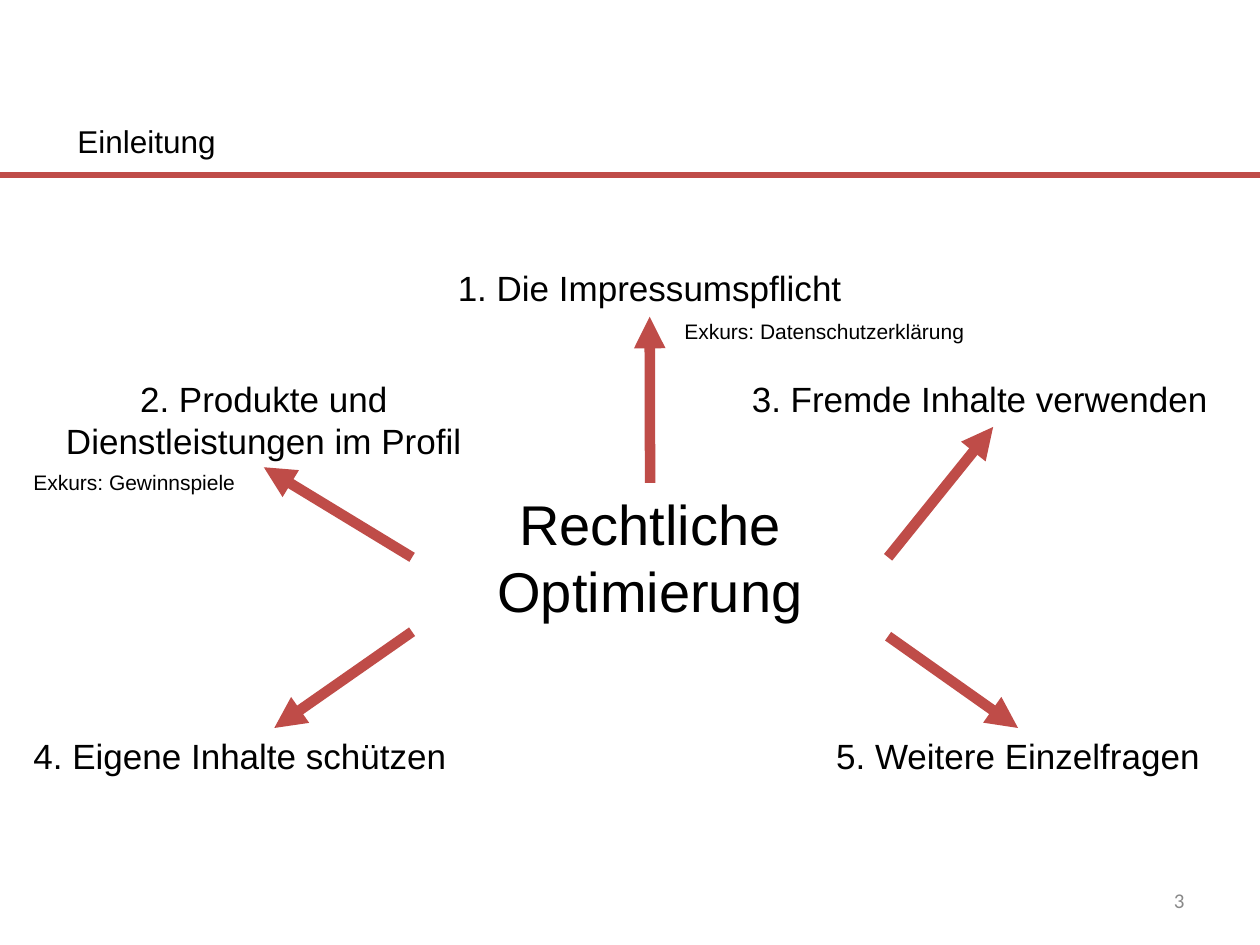
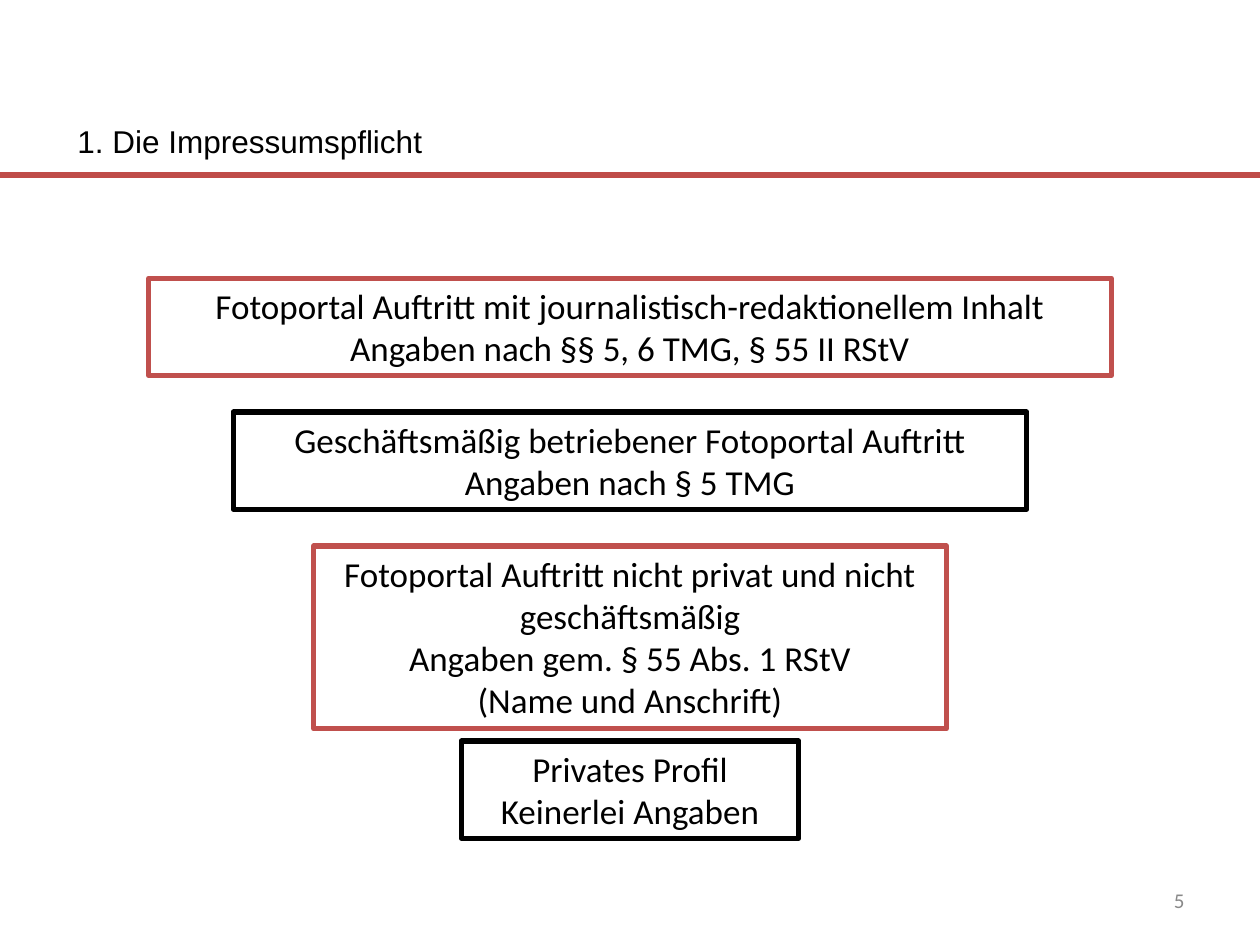
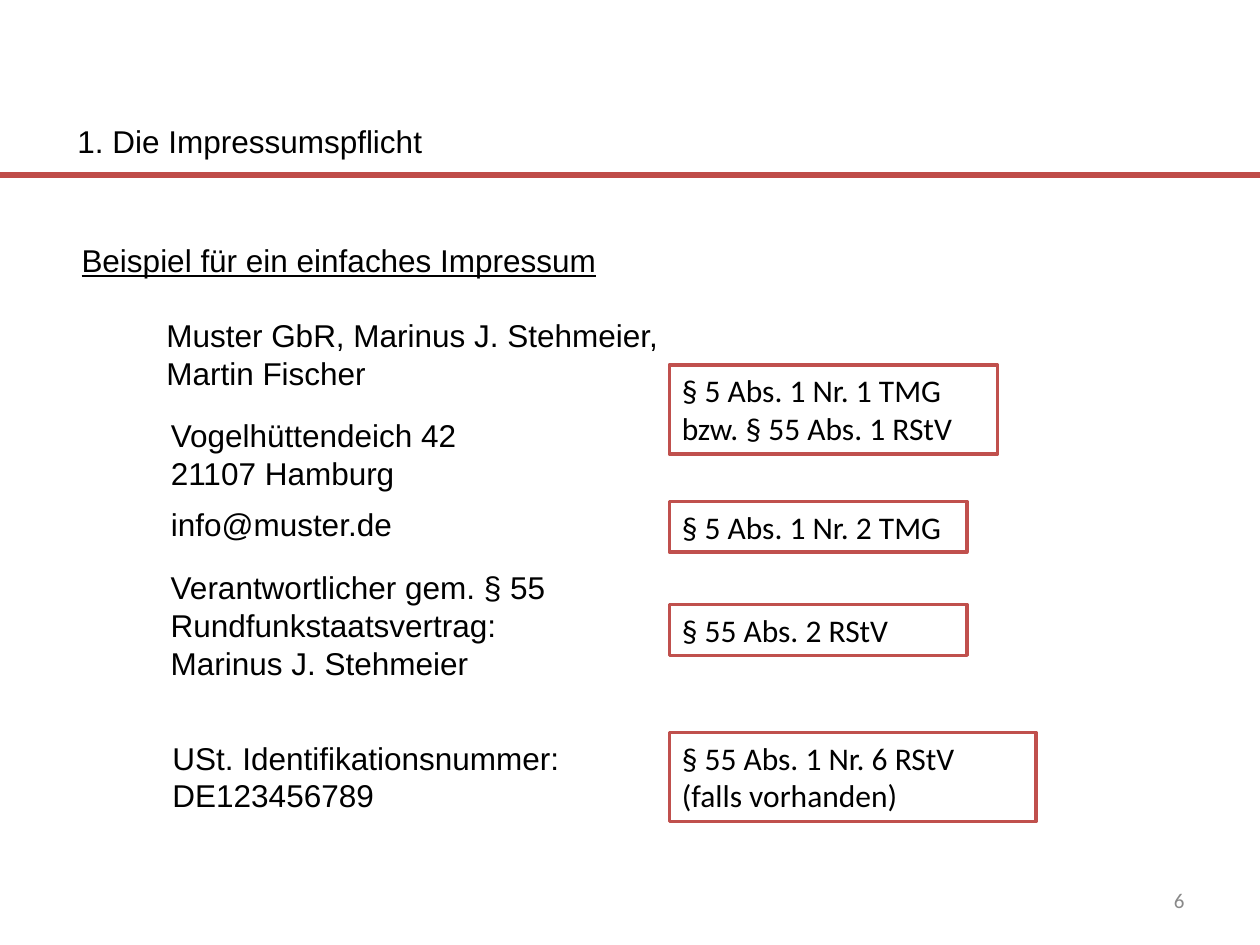
from lxml import etree
from pptx import Presentation
from pptx.dml.color import RGBColor
from pptx.enum.shapes import MSO_CONNECTOR, MSO_SHAPE
from pptx.enum.text import MSO_ANCHOR, MSO_AUTO_SIZE, PP_ALIGN
from pptx.oxml.ns import qn
from pptx.util import Pt

STRAIGHT, RECTANGLE = MSO_CONNECTOR.STRAIGHT, MSO_SHAPE.RECTANGLE
TOP, MIDDLE = MSO_ANCHOR.TOP, MSO_ANCHOR.MIDDLE
GROW, FIXED = MSO_AUTO_SIZE.SHAPE_TO_FIT_TEXT, MSO_AUTO_SIZE.NONE
LEFT, CENTER, RIGHT = PP_ALIGN.LEFT, PP_ALIGN.CENTER, PP_ALIGN.RIGHT

COLORS = {"text": "000000", "rule": "BF4C48", "red": "C0504D",
          "black": "000000", "white": "FFFFFF", "number": "898989"}
SLIDE_WIDTH, SLIDE_HEIGHT = 720, 540
RULE_TOP = 100
TITLE_BOX = (37, 66, 227, 29)
NUMBER_BOX = (516, 500, 168, 29)

# Slide content: boxes are (left, top, width, height)
HUB = (["Rechtliche", "Optimierung"], (235.5, 276, 272, 85))
# text, box, alignment, arrow start as fractions of the hub box
TOPICS = [
    ("1. Die Impressumspflicht", (212.5, 149, 317.5, 32), CENTER, (0.5, 0)),
    ("2. Produkte und Dienstleistungen im Profil", (9, 212, 283.5, 55), CENTER, (0, 0.5)),
    ("3. Fremde Inhalte verwenden", (422.5, 212, 290, 32), LEFT, (1, 0.5)),
    ("4. Eigene Inhalte schützen", (12, 416, 289.5, 32), LEFT, (0, 1)),
    ("5. Weitere Einzelfragen", (468, 416, 227.5, 32), CENTER, (1, 1.03)),
]
ASIDES = [
    ("Exkurs: Datenschutzerklärung", (384, 178.5, 199, 22)),
    ("Exkurs: Gewinnspiele", (12, 265, 199, 22)),
]

# paragraphs, top, width, height, outline
DUTY_LEVELS = [
    (["Fotoportal Auftritt mit journalistisch-redaktionellem Inhalt",
      "Angaben nach §§ 5, 6 TMG, § 55 II RStV"], 159, 550, 55.5, "red"),
    (["Geschäftsmäßig betriebener Fotoportal Auftritt",
      "Angaben nach § 5 TMG"], 235.5, 453.5, 55.5, "black"),
    (["Fotoportal Auftritt nicht privat und nicht geschäftsmäßig",
      "Angaben gem. § 55 Abs. 1 RStV", "(Name und Anschrift)"], 312, 361.5, 104.5, "red"),
    (["Privates Profil", "Keinerlei Angaben"], 423.5, 193, 55.5, "black"),
]

IMPRINT_HEADING = ("Beispiel für ein einfaches Impressum", (39.5, 134, 309, 29))
IMPRINT_PARTS = [
    (["Muster GbR, Marinus J. Stehmeier, Martin Fischer"], (88, 177, 312, 51)),
    (["Vogelhüttendeich 42", "21107 Hamburg"], (90.5, 234, 181.5, 51)),
    (["info@muster.de"], (90.5, 285, 175.5, 29)),
    (["Verantwortlicher gem. § 55 Rundfunkstaatsvertrag:", "Marinus J. Stehmeier"],
     (90.5, 321, 232.5, 73)),
    (["USt. Identifikationsnummer:", "DE123456789"], (91.5, 418.5, 260.5, 51)),
]
# paragraphs, top, width, height
CITATION_LEFT = 382.5
CITATIONS = [
    (["§ 5 Abs. 1 Nr. 1 TMG bzw. § 55 Abs. 1 RStV"], 208.5, 187.5, 51),
    (["§ 5 Abs. 1 Nr. 2 TMG"], 286.5, 170, 29),
    (["§ 55 Abs. 2 RStV"], 345.5, 170, 29),
    (["§ 55 Abs. 1 Nr. 6 RStV", "(falls vorhanden)"], 418.5, 209.5, 51),
]


def rgb(name):
    return RGBColor.from_string(COLORS[name])


def write(shape, paragraphs, size, alignment=LEFT, color="text", name="Arial",
          anchor=TOP, fit=GROW, **extra):
    frame = shape.text_frame
    frame.text = "\n".join(paragraphs)
    frame_format = {"word_wrap": True, "vertical_anchor": anchor, "auto_size": fit}
    for attribute, value in frame_format.items():
        setattr(frame, attribute, value)
    font_format = {"size": Pt(size), "name": name, **extra}
    for paragraph in frame.paragraphs:
        paragraph.alignment = alignment
        for run in paragraph.runs:
            for attribute, value in font_format.items():
                setattr(run.font, attribute, value)
            run.font.color.rgb = rgb(color)


def add_text(slide, paragraphs, box, size, **options):
    write(slide.shapes.add_textbox(*map(Pt, box)), paragraphs, size, **options)


def add_frame(slide, paragraphs, box, size, outline, width, **options):
    shape = slide.shapes.add_shape(RECTANGLE, *map(Pt, box))
    shape.shadow.inherit = False
    shape.fill.solid()
    shape.fill.fore_color.rgb = rgb("white")
    shape.line.color.rgb = rgb(outline)
    shape.line.width = Pt(width)
    write(shape, paragraphs, size, name="Calibri", **options)


def add_line(slide, start, end, width, arrow=False):
    connector = slide.shapes.add_connector(STRAIGHT, *map(Pt, (*start, *end)))
    connector.line.color.rgb = rgb("rule")
    connector.line.width = Pt(width)
    if arrow:
        etree.SubElement(connector.line._get_or_add_ln(), qn("a:tailEnd"), type="triangle")
    etree.SubElement(connector._element.spPr, qn("a:effectLst"))


def add_slide(presentation, title, number):
    """Title, red rule and page number shared by all slides."""
    slide = presentation.slides.add_slide(presentation.slide_layouts[5])
    add_line(slide, (0, RULE_TOP), (SLIDE_WIDTH, RULE_TOP), 3)
    placeholder = slide.shapes.title
    position = dict(zip(("left", "top", "width", "height"), TITLE_BOX))
    for attribute, value in position.items():
        setattr(placeholder, attribute, Pt(value))
    write(placeholder, [title], 18)
    add_text(slide, [str(number)], NUMBER_BOX, 12, alignment=RIGHT, color="number",
             name="Calibri", anchor=MIDDLE, fit=FIXED)
    return slide


def build_overview(presentation):
    slide = add_slide(presentation, "Einleitung", 3)
    hub_text, hub_box = HUB
    hub_left, hub_top, hub_width, hub_height = hub_box
    add_text(slide, hub_text, hub_box, 32, alignment=CENTER)
    for text, box, alignment, (across, down) in TOPICS:
        add_text(slide, [text], box, 20, alignment=alignment)
        # Each arrow ends at the middle of the topic edge that faces the hub
        left, top, width, height = box
        start = (hub_left + across * hub_width, hub_top + down * hub_height)
        edge = top + height if top < hub_top else top
        add_line(slide, start, (left + width / 2, edge), 6, arrow=True)
    for text, box in ASIDES:
        add_text(slide, [text], box, 12)


def build_duty_levels(presentation):
    slide = add_slide(presentation, "1. Die Impressumspflicht", 5)
    for paragraphs, top, width, height, outline in DUTY_LEVELS:
        box = ((SLIDE_WIDTH - width) / 2, top, width, height)
        add_frame(slide, paragraphs, box, 20, outline, 3, alignment=CENTER)


def build_imprint(presentation):
    slide = add_slide(presentation, "1. Die Impressumspflicht", 6)
    heading, heading_box = IMPRINT_HEADING
    add_text(slide, [heading], heading_box, 18, underline=True)
    for paragraphs, box in IMPRINT_PARTS:
        add_text(slide, paragraphs, box, 18)
    for paragraphs, *place in CITATIONS:
        add_frame(slide, paragraphs, (CITATION_LEFT, *place), 18, "red", 2)


def main():
    presentation = Presentation()
    presentation.slide_width = Pt(SLIDE_WIDTH)
    presentation.slide_height = Pt(SLIDE_HEIGHT)
    build_overview(presentation)
    build_duty_levels(presentation)
    build_imprint(presentation)
    presentation.save("out.pptx")


if __name__ == "__main__":
    main()
